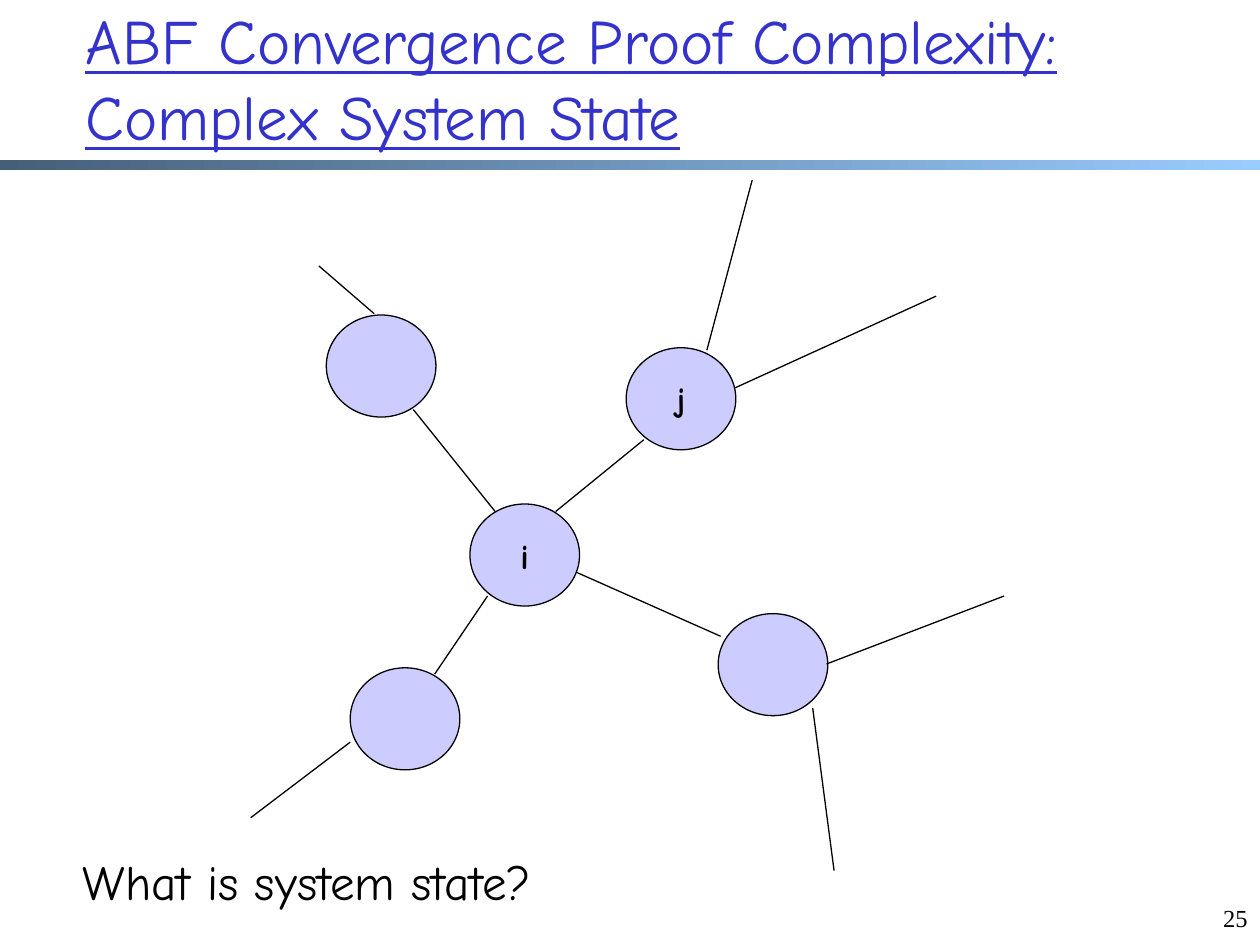
from lxml import etree
from pptx import Presentation
from pptx.dml.color import RGBColor
from pptx.enum.shapes import MSO_CONNECTOR, MSO_SHAPE
from pptx.enum.text import MSO_ANCHOR as ANCHOR, PP_ALIGN as ALIGN
from pptx.oxml.ns import qn
from pptx.util import Inches, Pt

COLORS = {"title": "3333CC", "node": "CCCCFF", "ink": "000000",
          "bar_start": "465F78", "bar_end": "99CCFF"}
FONT = "Comic Neue"
NODE_W, NODE_H = 0.87, 0.81
NODES = [("i", 1.74, 2.57), ("j", 2.98, 1.33), ("", 3.71, 3.44),
         ("", 0.79, 3.87), ("", 0.6, 1.07)]
INNER_LINKS = [(2.42, 2.63, 3.12, 2.06), (1.94, 2.63, 1.29, 1.82),
               (1.46, 3.92, 1.88, 3.3), (2.58, 3.11, 3.73, 3.62)]
OUTER_LINKS = [(3.62, 1.35, 3.98, 0), (3.84, 1.65, 5.44, 0.92),
               (0.98, 1.06, 0.54, 0.68), (0.79, 4.46, 0, 5.06),
               (4.46, 4.19, 4.63, 5.48), (4.57, 3.84, 5.98, 3.3)]


def rgb(name):
    """Return the named colour."""
    return RGBColor.from_string(COLORS[name])


def add_run(p, text, size, color="ink", font=FONT, bold=False, underline=False):
    """Add one formatted run to a paragraph."""
    r = p.add_run()
    r.text = text
    r.font.size = Pt(size)
    r.font.name = font
    r.font.bold = bold
    r.font.underline = underline
    r.font.color.rgb = rgb(color)


def add_text(s, box, text, size, align=ALIGN.LEFT, anchor=ANCHOR.TOP, wrap=True, **style):
    """Place a one-paragraph text box."""
    tf = s.shapes.add_textbox(*map(Inches, box)).text_frame
    tf.word_wrap = wrap
    tf.vertical_anchor = anchor
    p = tf.paragraphs[0]
    p.alignment = align
    add_run(p, text, size, **style)


def add_header(s, x, y, w, h):
    """Place the title and the gradient bar under it."""
    bar_h = 0.08
    bar = s.shapes.add_shape(MSO_SHAPE.RECTANGLE, Inches(x), Inches(y + h - bar_h),
                             Inches(w), Inches(bar_h))
    bar.shadow.inherit = False
    bar.line.fill.background()
    bar.fill.gradient()
    bar.fill.gradient_angle = 0
    for stop, name in zip(bar.fill.gradient_stops, ("bar_start", "bar_end")):
        stop.color.rgb = rgb(name)
    add_text(s, (x + 0.58, y - 0.01, 8.78, 1.25),
             "ABF Convergence Proof Complexity: Complex System State", 36,
             anchor=ANCHOR.MIDDLE, color="title", underline=True)


def add_node(shapes, x, y, label):
    """Place one network node."""
    node = shapes.add_shape(MSO_SHAPE.OVAL, Inches(x), Inches(y),
                            Inches(NODE_W), Inches(NODE_H))
    node.shadow.inherit = False
    node.fill.solid()
    node.fill.fore_color.rgb = rgb("node")
    node.line.color.rgb = rgb("ink")
    node.line.width = Pt(0.75)
    if label:
        tf = node.text_frame
        tf.word_wrap = False
        tf.vertical_anchor = ANCHOR.MIDDLE
        p = tf.paragraphs[0]
        p.alignment = ALIGN.CENTER
        add_run(p, label, 20, bold=True)


def add_link(shapes, x1, y1, x2, y2):
    """Draw one straight network link."""
    link = shapes.add_connector(MSO_CONNECTOR.STRAIGHT, *map(Inches, (x1, y1, x2, y2)))
    link.line.color.rgb = rgb("ink")
    link.line.width = Pt(0.75)
    etree.SubElement(link._element.spPr, qn("a:effectLst"))


def add_network(s, x, y):
    """Place the grouped network with its top left corner at x, y."""
    shapes = s.shapes.add_group_shape().shapes
    for label, dx, dy in NODES:
        add_node(shapes, x + dx, y + dy, label)
    for x1, y1, x2, y2 in INNER_LINKS + OUTER_LINKS:
        add_link(shapes, x + x1, y + y1, x + x2, y + y2)


def main():
    """Build and save the slide."""
    prs = Presentation()
    prs.slide_width, prs.slide_height = Inches(10), Inches(7.5)
    s = prs.slides.add_slide(prs.slide_layouts[6])
    add_header(s, 0, 0, 10, 1.35)
    add_network(s, 1.99, 1.43)
    add_text(s, (0.56, 6.71, 4.36, 0.57), "What is system state?", 28, wrap=False)
    add_text(s, (9.5, 7.12, 0.5, 0.5), "25", 14, align=ALIGN.RIGHT, font="Times New Roman")
    prs.save("out.pptx")


if __name__ == "__main__":
    main()
